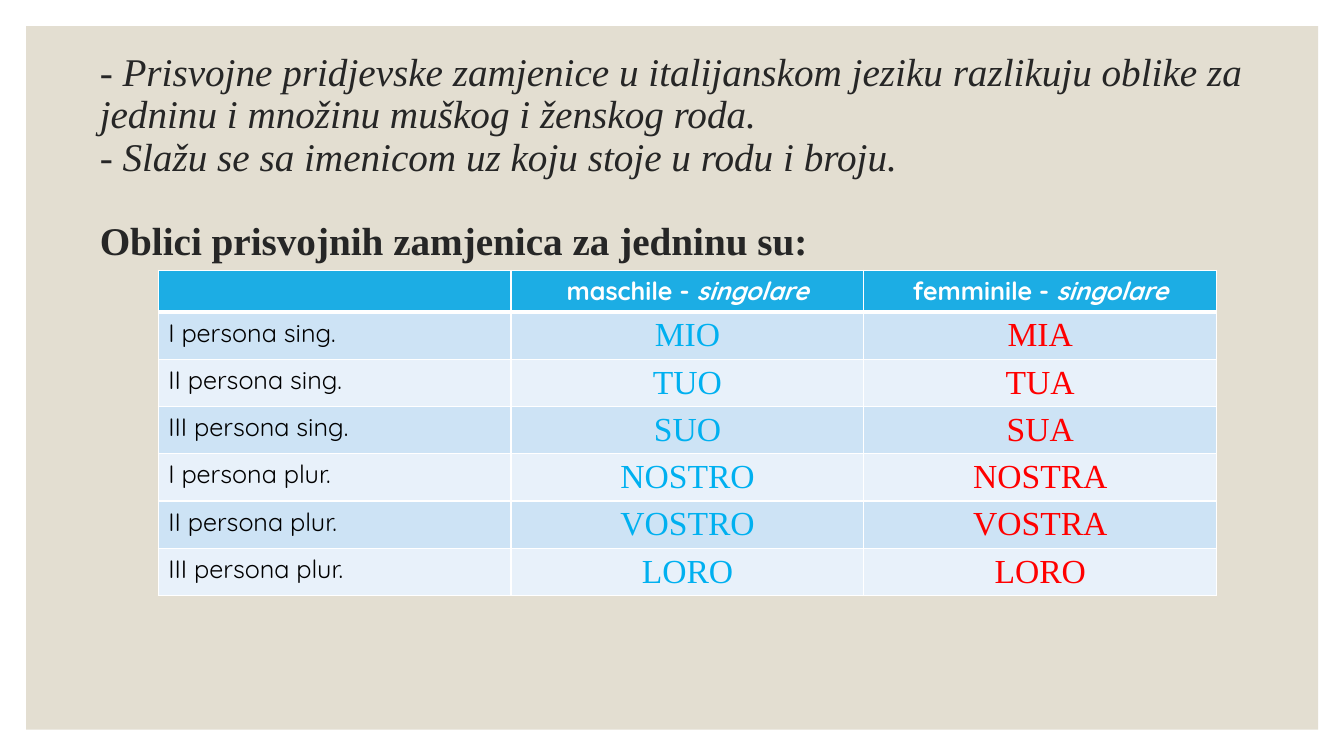
"""Build a slide on Italian singular possessive adjectives with a table of forms."""
from typing import NamedTuple

from lxml.etree import SubElement
from pptx import Presentation
from pptx.dml.color import RGBColor
from pptx.enum.shapes import MSO_SHAPE
from pptx.enum.text import MSO_ANCHOR, MSO_AUTO_SIZE, PP_ALIGN
from pptx.oxml.ns import qn
from pptx.slide import Slide
from pptx.table import _Cell as Cell
from pptx.util import Cm, Pt

WHITE = RGBColor(0xFF, 0xFF, 0xFF)
BLACK = RGBColor(0x00, 0x00, 0x00)
CHARCOAL = RGBColor(0x26, 0x26, 0x26)
SAND = RGBColor(0xE3, 0xDE, 0xD1)
HEADER_BLUE = RGBColor(0x1C, 0xAD, 0xE4)
BAND_FILLS = (RGBColor(0xCD, 0xE3, 0xF5), RGBColor(0xE8, 0xF1, 0xFA))
MASCULINE_BLUE = RGBColor(0x00, 0xB0, 0xF0)
FEMININE_RED = RGBColor(0xFF, 0x00, 0x00)
SERIF = "Times New Roman"
SANS = "Quicksand"


class TextStyle(NamedTuple):
    font: str
    size: int
    color: RGBColor
    bold: bool = False
    italic: bool = False
    align: PP_ALIGN = PP_ALIGN.LEFT


class Possessive(NamedTuple):
    person: str
    masculine: str
    feminine: str


RULE = TextStyle(SERIF, 28, CHARCOAL, italic=True)
HEADING = TextStyle(SERIF, 28, CHARCOAL, bold=True)
HEADER = TextStyle(SANS, 18, WHITE, bold=True, align=PP_ALIGN.CENTER)
COLUMN_STYLES = (
    TextStyle(SANS, 18, BLACK),
    TextStyle(SERIF, 24, MASCULINE_BLUE, align=PP_ALIGN.CENTER),
    TextStyle(SERIF, 24, FEMININE_RED, align=PP_ALIGN.CENTER),
)
TITLE_LINES = (
    ("- Prisvojne pridjevske zamjenice u italijanskom jeziku razlikuju oblike za "
     "jedninu i množinu muškog i ženskog roda.", RULE),
    ("- Slažu se sa imenicom uz koju stoje u rodu i broju.", RULE),
    ("Oblici prisvojnih zamjenica za jedninu su:", HEADING),
)
GENDERS = ("maschile", "femminile")
POSSESSIVES = (
    Possessive("I persona sing.", "MIO", "MIA"),
    Possessive("II persona sing.", "TUO", "TUA"),
    Possessive("III persona sing.", "SUO", "SUA"),
    Possessive("I persona plur.", "NOSTRO", "NOSTRA"),
    Possessive("II persona plur.", "VOSTRO", "VOSTRA"),
    Possessive("III persona plur.", "LORO", "LORO"),
)
COLUMN_WIDTH = Cm(8.89)
HEADER_HEIGHT = Cm(1.04)
ROW_HEIGHT = Cm(1.19)


def format_paragraph(paragraph, style: TextStyle) -> None:
    paragraph.alignment = style.align
    for run in paragraph.runs:
        run.font.name = style.font
        run.font.size = Pt(style.size)
        run.font.color.rgb = style.color
        run.font.bold = style.bold
        run.font.italic = style.italic


def format_cell(cell: Cell, fill: RGBColor, top: float = 1, bottom: float = 1) -> None:
    properties = cell._tc.get_or_add_tcPr()
    for side, width in (("L", 1), ("R", 1), ("T", top), ("B", bottom)):
        line = SubElement(properties, qn(f"a:ln{side}"), w=str(Pt(width)))
        solid = SubElement(line, qn("a:solidFill"))
        SubElement(solid, qn("a:srgbClr"), val=str(WHITE))
    cell.fill.solid()
    cell.fill.fore_color.rgb = fill


def add_title(slide: Slide) -> None:
    title = slide.shapes.title
    title.left, title.top, title.width, title.height = Cm(2.26), Cm(1.14), Cm(29.36), Cm(5.69)
    frame = title.text_frame
    frame.text = "\n".join(text for text, _ in TITLE_LINES)
    frame.word_wrap = True
    frame.auto_size = MSO_AUTO_SIZE.NONE
    frame.vertical_anchor = MSO_ANCHOR.MIDDLE
    for paragraph, (_, style) in zip(frame.paragraphs, TITLE_LINES):
        paragraph.line_spacing = 0.9
        paragraph.space_before = Pt(30 if style is HEADING else 0)
        format_paragraph(paragraph, style)


def add_panel(slide: Slide) -> None:
    panel = slide.shapes.add_shape(
        MSO_SHAPE.RECTANGLE, Cm(0.66), Cm(0.66), Cm(32.56), Cm(17.73))
    panel.shadow.inherit = False
    panel.fill.solid()
    panel.fill.fore_color.rgb = SAND
    panel.line.fill.background()
    slide.shapes.title.element.addprevious(panel.element)


def add_possessive_table(slide: Slide) -> None:
    columns = len(COLUMN_STYLES)
    table = slide.shapes.add_table(
        len(POSSESSIVES) + 1, columns, Cm(3.99), Cm(6.81),
        COLUMN_WIDTH * columns, HEADER_HEIGHT + ROW_HEIGHT * len(POSSESSIVES)).table
    for column in table.columns:
        column.width = COLUMN_WIDTH
    for index, row in enumerate(table.rows):
        row.height = ROW_HEIGHT if index else HEADER_HEIGHT

    for cell in table.rows[0].cells:
        format_cell(cell, HEADER_BLUE, bottom=3)
    for column, gender in enumerate(GENDERS, start=1):
        paragraph = table.cell(0, column).text_frame.paragraphs[0]
        paragraph.text = f"{gender} - "
        number = paragraph.add_run()
        number.text = "singolare"
        format_paragraph(paragraph, HEADER)
        number.font.italic = True

    for row, possessive in enumerate(POSSESSIVES, start=1):
        for column, (text, style) in enumerate(zip(possessive, COLUMN_STYLES)):
            cell = table.cell(row, column)
            cell.text_frame.text = text
            format_paragraph(cell.text_frame.paragraphs[0], style)
            format_cell(cell, BAND_FILLS[(row - 1) % 2], top=3 if row == 1 else 1)


def main() -> None:
    presentation = Presentation()
    presentation.slide_width, presentation.slide_height = Cm(33.87), Cm(19.05)
    slide = presentation.slides.add_slide(presentation.slide_layouts[5])
    add_title(slide)
    add_panel(slide)
    add_possessive_table(slide)
    presentation.save("out.pptx")


if __name__ == "__main__":
    main()
